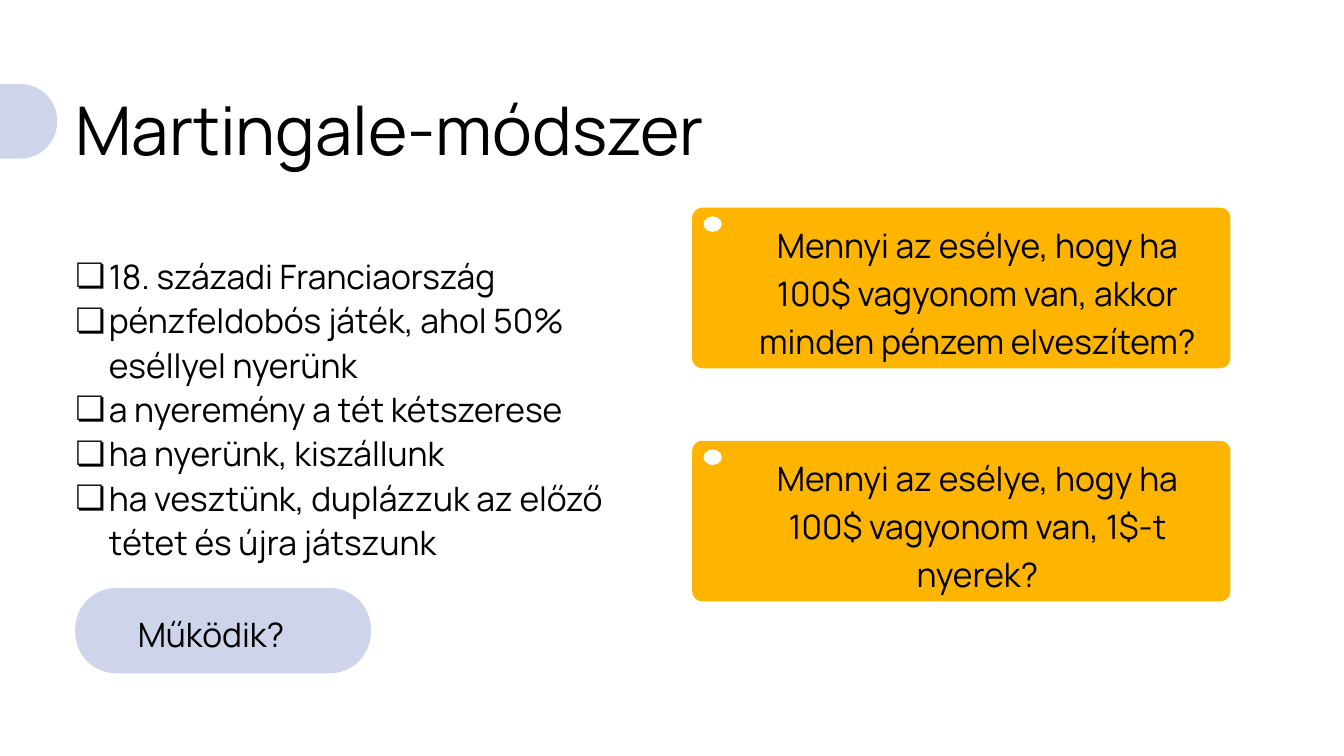
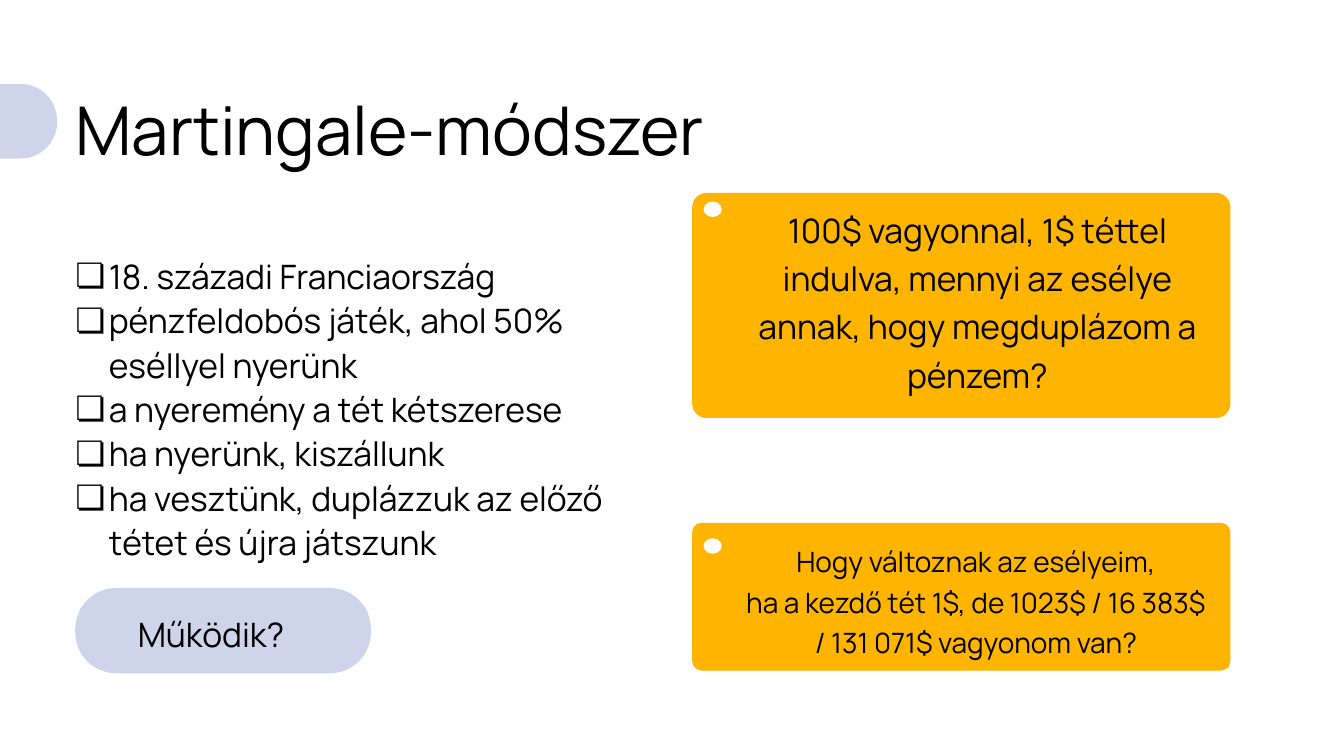
import pptx
import pptx.dml.color
import pptx.enum.shapes
import pptx.enum.text
import pptx.util
from lxml import etree
from pptx.oxml.ns import qn

# Content
TITLE = "Martingale-módszer"
RULES = [
    "18. századi Franciaország",
    "pénzfeldobós játék, ahol 50% eséllyel nyerünk",
    "a nyeremény a tét kétszerese",
    "ha nyerünk, kiszállunk",
    "ha vesztünk, duplázzuk az előző tétet és újra játszunk",
]
DOUBT = "Működik?"
WIDE = {"inset": 0.23, "text_left": 10.46, "text_width": 8.13, "size": 30}
# Each question: card top, card height, text, changes to the card's defaults
SLIDES = [
    [
        (3.09, 2.39, "Mennyi az esélye, hogy ha 100$ vagyonom van, "
                     "akkor minden pénzem elveszítem?", {}),
        (6.56, 2.39, "Mennyi az esélye, hogy ha 100$ vagyonom van, 1$-t nyerek?", {}),
    ],
    [
        (2.87, 3.35, "100$ vagyonnal, 1$ téttel indulva, mennyi az esélye "
                     "annak, hogy megduplázom a pénzem?", {}),
        (7.78, 2.2, "Hogy változnak az esélyeim,\n"
                    "ha a kezdő tét 1$, de 1023$ / 16 383$\n"
                    "/ 131 071$ vagyonom van?", WIDE),
    ],
]

# Shared look
FONT = "Manrope"
BLACK, WHITE, LILAC, AMBER = "000000", "FFFFFF", "CED5EA", "FFB400"
WIDTH, HEIGHT = 20, 11.25
MARGIN = 1.12
CARD_LEFT, CARD_WIDTH = 10.3, 8.01
SHAPES = pptx.enum.shapes.MSO_SHAPE
ALIGN = pptx.enum.text.PP_ALIGN


def color(value):
    return pptx.dml.color.RGBColor.from_string(value)


def place(item, left, top, width, height):
    item.left, item.top, item.width, item.height = map(
        pptx.util.Inches, (left, top, width, height))


def add_bullet(para):
    properties = para._p.get_or_add_pPr()
    indent = pptx.util.Inches(0.5)
    properties.set("marL", str(indent))
    properties.set("indent", str(-indent))
    tint = etree.SubElement(properties, qn("a:buClr"))
    etree.SubElement(tint, qn("a:srgbClr"), val=BLACK)
    etree.SubElement(properties, qn("a:buChar"), char="❏")


def write(box, texts, size=36, spacing=1.1, align=ALIGN.LEFT, bullets=False):
    """Fill a box with paragraphs; a newline within a text is a line break."""
    frame = box.text_frame
    frame.margin_left = frame.margin_right = 0
    frame.margin_top = frame.margin_bottom = 0
    frame.word_wrap = True
    frame.auto_size = pptx.enum.text.MSO_AUTO_SIZE.NONE
    frame.vertical_anchor = pptx.enum.text.MSO_ANCHOR.TOP
    for number, text in enumerate(texts):
        para = frame.add_paragraph() if number else frame.paragraphs[0]
        if bullets:
            add_bullet(para)
        para.alignment = align
        para.line_spacing = spacing
        para.space_before = pptx.util.Pt(0)
        for row, line in enumerate(text.split("\n")):
            if row:
                para.add_line_break()
            span = para.add_run()
            span.text = line
            span.font.name = FONT
            span.font.size = pptx.util.Pt(size)
            span.font.color.rgb = color(BLACK)


def add_text(page, at, text, **style):
    box = page.shapes.add_textbox(0, 0, 0, 0)
    place(box, *at)
    write(box, [text], **style)


def add_shape(page, kind, at, fill, rounding=None):
    shape = page.shapes.add_shape(kind, 0, 0, 0, 0)
    place(shape, *at)
    shape.shadow.inherit = False
    shape.fill.solid()
    shape.fill.fore_color.rgb = color(fill)
    shape.line.fill.background()
    if rounding is not None:
        shape.adjustments[0] = rounding


def add_card(page, top, height, text, inset=0.13, text_left=11.07,
             text_width=6.95, size=36):
    add_shape(page, SHAPES.ROUNDED_RECTANGLE,
              (CARD_LEFT, top, CARD_WIDTH, height), AMBER, 0.064)
    add_shape(page, SHAPES.OVAL, (CARD_LEFT + 0.17, top + inset, 0.27, 0.23), WHITE)
    add_text(page, (text_left, top + inset, text_width, height - 2 * inset),
             text, size=size, spacing=1.2, align=ALIGN.CENTER)


def add_page(deck, cards):
    page = deck.slides.add_slide(deck.slide_layouts[1])
    # Title and rules
    place(page.shapes.title, MARGIN, 1.2, 15.59, 1.21)
    write(page.shapes.title, [TITLE], size=72)
    body = page.placeholders[1]
    place(body, MARGIN, 3.75, 8.2, 5.27)
    write(body, RULES, bullets=True)
    # Edge tab and the pill with the doubt
    add_shape(page, SHAPES.ROUNDED_RECTANGLE, (-3.14, 1.25, 3.99, 1.11), LILAC, 0.49)
    add_shape(page, SHAPES.ROUNDED_RECTANGLE, (MARGIN, 8.75, 4.4, 1.27), LILAC, 0.48)
    add_text(page, (2.05, 9.08, 2.55, 0.61), DOUBT)
    # Question cards
    for top, height, text, changes in cards:
        add_card(page, top, height, text, **changes)


def main():
    deck = pptx.Presentation()
    deck.slide_width = pptx.util.Inches(WIDTH)
    deck.slide_height = pptx.util.Inches(HEIGHT)
    for cards in SLIDES:
        add_page(deck, cards)
    deck.save("out.pptx")


if __name__ == "__main__":
    main()
